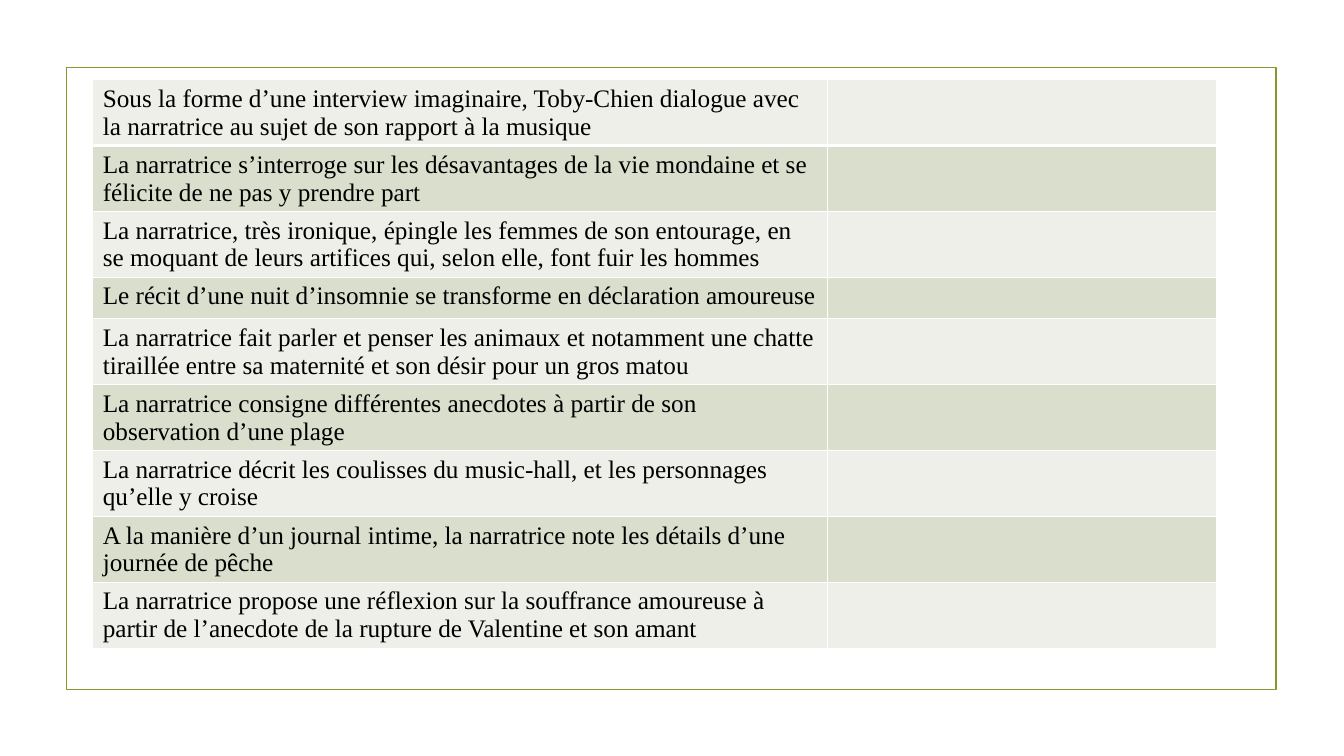
from dataclasses import dataclass

from lxml.etree import fromstring
from pptx import Presentation
from pptx.dml.color import RGBColor
from pptx.enum.shapes import MSO_SHAPE
from pptx.util import Inches, Pt


@dataclass(frozen=True)
class Theme:
    font: str = "Times New Roman"
    size: int = 18
    text: str = "000000"
    frame: str = "83992A"
    border: str = "FFFFFF"
    bands: tuple = ("EDEFE8", "D9DECD")


theme = Theme()
NS = "http://schemas.openxmlformats.org/drawingml/2006/main"
ROW_H = 0.41
COLS = (7.29, 3.86)
SUMMARIES = [
    "Sous la forme d’une interview imaginaire, Toby-Chien dialogue avec la narratrice au sujet de son rapport à la musique",
    "La narratrice s’interroge sur les désavantages de la vie mondaine et se félicite de ne pas y prendre part",
    "La narratrice, très ironique, épingle les femmes de son entourage, en se moquant de leurs artifices qui, selon elle, font fuir les hommes",
    "Le récit d’une nuit d’insomnie se transforme en déclaration amoureuse",
    "La narratrice fait parler et penser les animaux et notamment une chatte tiraillée entre sa maternité et son désir pour un gros matou",
    "La narratrice consigne différentes anecdotes à partir de son observation d’une plage",
    "La narratrice décrit les coulisses du music-hall, et les personnages qu’elle y croise",
    "A la manière d’un journal intime, la narratrice note les détails d’une journée de pêche",
    "La narratrice propose une réflexion sur la souffrance amoureuse à partir de l’anecdote de la rupture de Valentine et son amant",
]


def set_borders(cell, widths):
    tcPr = cell._tc.get_or_add_tcPr()
    for i, (side, width) in enumerate(zip("LRTB", widths)):
        tcPr.insert(i, fromstring(
            f'<a:ln{side} xmlns:a="{NS}" w="{Pt(width)}"><a:solidFill>'
            f'<a:srgbClr val="{theme.border}"/></a:solidFill></a:ln{side}>'))


prs = Presentation()
prs.slide_width, prs.slide_height = Inches(13.33), Inches(7.5)
s = prs.slides.add_slide(prs.slide_layouts[6])

frame = s.shapes.add_shape(
    MSO_SHAPE.RECTANGLE, Inches(0.66), Inches(0.67), Inches(12), Inches(6.17))
frame.shadow.inherit = False
frame.fill.background()
frame.line.color.rgb = RGBColor.from_string(theme.frame)
frame.line.width = Pt(1.25)

table = s.shapes.add_table(
    len(SUMMARIES), len(COLS), Inches(0.92), Inches(0.79),
    Inches(sum(COLS)), Inches(ROW_H * len(SUMMARIES))).table
table.first_row = False
table.horz_banding = False
for col, width in zip(table.columns, COLS):
    col.width = Inches(width)

for i, (row, summary) in enumerate(zip(table.rows, SUMMARIES)):
    row.height = Inches(ROW_H)
    row.cells[0].text = summary
    top, bottom = 3 if i == 1 else 1, 3 if i == 0 else 1
    for cell in row.cells:
        cell.fill.solid()
        cell.fill.fore_color.rgb = RGBColor.from_string(theme.bands[i % 2])
        set_borders(cell, (1, 1, top, bottom))
    for r in row.cells[0].text_frame.paragraphs[0].runs:
        r.font.name = theme.font
        r.font.size = Pt(theme.size)
        r.font.color.rgb = RGBColor.from_string(theme.text)

prs.save("out.pptx")
